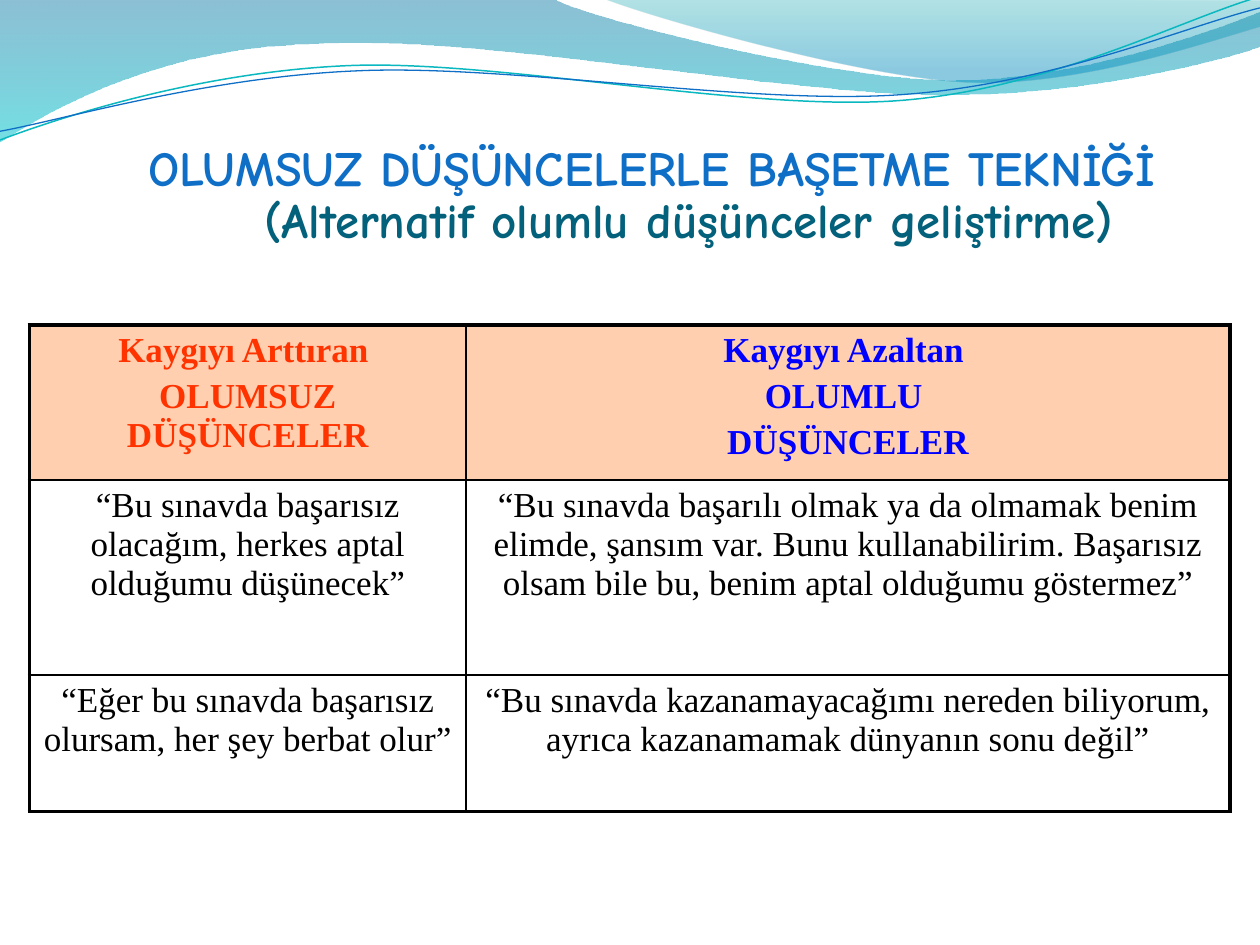
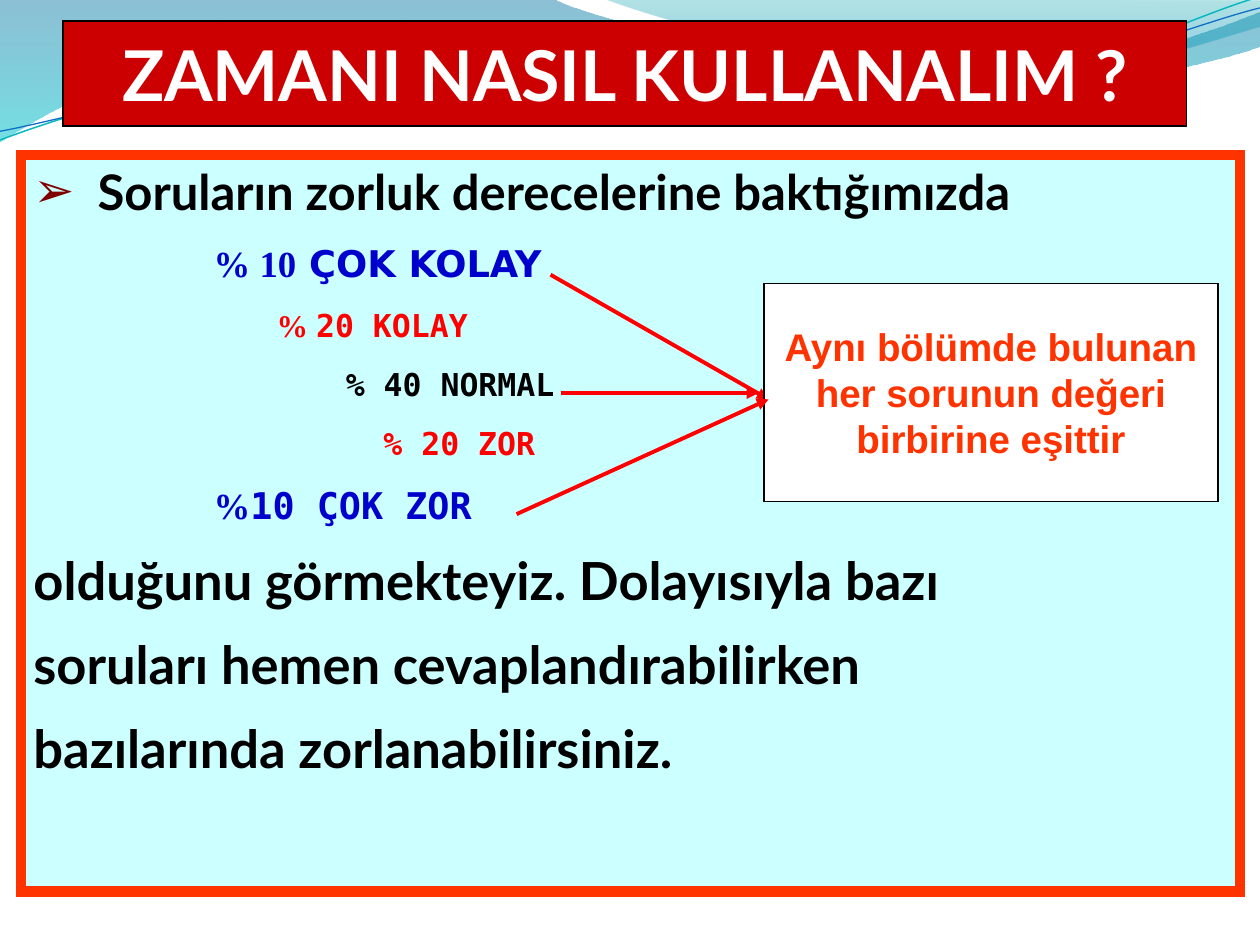
from dataclasses import dataclass

from lxml import etree
from pptx import Presentation
from pptx.dml.color import RGBColor
from pptx.enum import shapes, text
from pptx.oxml.ns import qn
from pptx.util import Pt


@dataclass(frozen=True)
class Theme:
    blue: str = "0F6FC6"
    teal: str = "04617B"
    aqua: str = "0AB8BF"
    orange: str = "FF3300"
    red: str = "FF0000"
    banner_red: str = "CC0000"
    maroon: str = "800000"
    positive: str = "0000FF"
    navy: str = "0000CC"
    peach: str = "FFCFAF"
    pale_cyan: str = "CCFFFF"
    black: str = "000000"
    white: str = "FFFFFF"
    comic: str = "Comic Neue"
    serif: str = "Times New Roman"
    lato: str = "Lato"
    arial: str = "Arial"
    sans: str = "DejaVu Sans"
    mono: str = "DejaVu Sans Mono"
    heading: int = 28
    cell: int = 20
    banner: int = 40
    lead: int = 28
    extreme: int = 21
    middle: int = 18
    closing: int = 30
    callout: int = 22


T = Theme()


def style_runs(paragraph, font, size, color, bold=True):
    for run in paragraph.runs:
        run.font.name, run.font.size, run.font.bold = font, Pt(size), bold
        run.font.color.rgb = RGBColor.from_string(color)


def paint(shape, fill, line, width):
    shape.shadow.inherit = False
    for part, color in ((shape.fill, fill), (shape.line.fill, line)):
        if color:
            part.solid()
            part.fore_color.rgb = RGBColor.from_string(color)
        else:
            part.background()
    if line:
        shape.line.width = Pt(width)
        etree.SubElement(shape.line._get_or_add_ln(), qn("a:miter"), lim="800000")


prs = Presentation()
prs.slide_width, prs.slide_height = Pt(720), Pt(540)
title_only = prs.slide_layouts[5]
coping = prs.slides.add_slide(title_only)
timing = prs.slides.add_slide(title_only)

# Shared waves: one point is a straight step, three points are a Bezier step
# Each wave: start, steps, gradient stops (colour, position, opacity), line, width
waves = [
    ((0, 0),
     [[(317, -0.5)],
      [(342.5, 12), (478, 45.5), (546, 45.5)],
      [(614, 45.5), (690, 18.5), (720, 6.5)],
      [(721, 26)],
      [(708, 31.5), (626.5, 54.5), (537, 54)],
      [(447.5, 54), (275, 20), (185, 24.5)],
      [(93, 26), (33, 60), (-1, 81.5)],
      [(0, 0)]],
     [("0074A1", 0, 45), ("00C6CF", 1, 55)], None, 0),
    ((345, -1),
     [[(366.5, 8), (491, 44.5), (553.5, 47)],
      [(616.5, 49.5), (692, 23), (720, 15)],
      [(720, 0)],
      [(345, -1)]],
     [("00A1A9", 0, 30), ("008BBF", 0.8, 45)], None, 0),
    ((0, 80),
     [[(34.5, 67), (114, 41), (199.5, 37.5)],
      [(284.5, 34), (427, 64), (513.5, 57.5)],
      [(600, 51), (675.5, 11), (718.5, -1.5)]],
     None, T.aqua, 0.85),
    ((0, 75),
     [[(34, 69), (118, 44), (204, 40.5)],
      [(290, 36.5), (430, 60.5), (516, 54)],
      [(602, 48), (677.5, 15), (720, 4.5)]],
     None, T.blue, 0.75),
]
UNITS = 100
for index, (start, steps, stops, line, width) in enumerate(waves):
    points = [(x * UNITS, y * UNITS) for step in steps for x, y in step]
    outline = coping.shapes.build_freeform(start[0] * UNITS, start[1] * UNITS,
                                           scale=Pt(1) / UNITS)
    outline.add_line_segments(points, close=bool(stops))
    wave = outline.convert_to_shape()
    # Join each group of three points into one curve
    segments = iter(list(wave.element.iter(qn("a:lnTo"))))
    for step in steps:
        group = [next(segments) for _ in step]
        if len(group) == 3:
            group[0].addprevious(curve := etree.Element(qn("a:cubicBezTo")))
            for segment in group:
                curve.append(segment[0])
                segment.getparent().remove(segment)
    paint(wave, None, line, width)
    if stops:
        wave.fill.gradient()
        wave.fill.gradient_angle = 270
        for stop, (color, position, _) in zip(wave.fill.gradient_stops, stops):
            stop.color.rgb = RGBColor.from_string(color)
            stop.position = position
        for tint, (_, _, opacity) in zip(wave.element.spPr.iter(qn("a:srgbClr")), stops):
            etree.SubElement(tint, qn("a:alpha"), val=str(opacity * 1000))
    # The master carries the waves for every slide
    wave.element.nvSpPr.cNvPr.set("id", str(100 + index))
    prs.slide_master.shapes.element.insert(2 + index, wave.element)

# Slide 1: heading
heading = coping.shapes.title
heading.left, heading.top, heading.width, heading.height = Pt(25), Pt(78.5), Pt(695), Pt(73.5)
frame = heading.text_frame
frame.word_wrap = True
frame.auto_size = text.MSO_AUTO_SIZE.NONE
frame.vertical_anchor = text.MSO_ANCHOR.TOP
frame.text = "OLUMSUZ DÜŞÜNCELERLE BAŞETME TEKNİĞİ "
technique = frame.paragraphs[0]
technique.add_run().text = "(Alternatif olumlu düşünceler geliştirme)"
technique.alignment = text.PP_ALIGN.CENTER
technique.line_spacing = 0.9
technique.space_before = Pt(5.6)
style_runs(technique, T.comic, T.heading, T.blue)
technique.runs[1].font.color.rgb = RGBColor.from_string(T.teal)
indent = technique._p.get_or_add_pPr()
indent.set("marL", str(Pt(42)))
indent.set("indent", str(Pt(-42)))

# Slide 1: table of negative and positive thoughts
thoughts = [
    ("Kaygıyı Arttıran \nOLUMSUZ DÜŞÜNCELER",
     "Kaygıyı Azaltan \nOLUMLU \nDÜŞÜNCELER"),
    ("“Bu sınavda başarısız olacağım, herkes aptal olduğumu düşünecek”",
     "“Bu sınavda başarılı olmak ya da olmamak benim elimde, şansım var. Bunu "
     "kullanabilirim. Başarısız olsam bile bu, benim aptal olduğumu göstermez”"),
    ("“Eğer bu sınavda başarısız olursam, her şey berbat olur”",
     "“Bu sınavda kazanamayacağımı nereden biliyorum, ayrıca kazanamamak "
     "dünyanın sonu değil”"),
]
table = coping.shapes.add_table(3, 2, Pt(16.8), Pt(185.6), Pt(686), Pt(278)).table
table.first_row = table.horz_banding = False
for column, width in zip(table.columns, (249.6, 436.4)):
    column.width = Pt(width)
for row, height in zip(table.rows, (88.6, 111.5, 77.9)):
    row.height = Pt(height)
for r, pair in enumerate(thoughts):
    for c, thought in enumerate(pair):
        cell = table.cell(r, c)
        cell.text_frame.text = thought
        for paragraph in cell.text_frame.paragraphs:
            paragraph.alignment = text.PP_ALIGN.CENTER
            paragraph.space_before = Pt(4)
            color = T.black if r else (T.orange, T.positive)[c]
            style_runs(paragraph, T.serif, T.cell, color, bold=r == 0)
        # Thick outer frame, thin inner rules
        outer = {"a:lnL": c == 0, "a:lnR": c == 1, "a:lnT": r == 0, "a:lnB": r == 2}
        for side, is_outer in outer.items():
            border = etree.SubElement(cell._tc.get_or_add_tcPr(), qn(side),
                                      w=str(Pt(2.25 if is_outer else 1)))
            solid = etree.SubElement(border, qn("a:solidFill"))
            etree.SubElement(solid, qn("a:srgbClr"), val=T.black)
        if r == 0:
            cell.fill.solid()
            cell.fill.fore_color.rgb = RGBColor.from_string(T.peach)
        else:
            cell.fill.background()

# Slide 2: banner
banner = timing.shapes.title
banner.left, banner.top, banner.width, banner.height = Pt(36), Pt(12), Pt(642.2), Pt(60)
paint(banner, T.banner_red, T.black, 0.75)
banner.text_frame.text = "ZAMANI NASIL KULLANALIM ?"
banner.text_frame.word_wrap = False
banner.text_frame.auto_size = text.MSO_AUTO_SIZE.NONE
banner.text_frame.vertical_anchor = text.MSO_ANCHOR.MIDDLE
banner.text_frame.paragraphs[0].alignment = text.PP_ALIGN.CENTER
style_runs(banner.text_frame.paragraphs[0], T.lato, T.banner, T.white)

# Slide 2: panel; each line is indent, size, colour and its (wording, font) runs
difficulty = [
    (36.7, T.lead, T.black, [("Soruların zorluk derecelerine baktığımızda", T.lato)]),
    (103, T.extreme, T.navy, [("% 10", T.serif), (" ÇOK KOLAY", T.sans)]),
    (139, T.middle, T.red, [("% ", T.serif), ("20 KOLAY", T.mono)]),
    (178.5, T.middle, T.black, [("% 40 NORMAL", T.mono)]),
    (200, T.middle, T.red, [("% 20 ZOR", T.mono)]),
    (103, T.extreme, T.navy, [("%", T.serif), ("10 ÇOK ZOR", T.mono)]),
    (0, T.closing, T.black, [("olduğunu görmekteyiz. Dolayısıyla bazı", T.lato)]),
    (0, T.closing, T.black, [("soruları hemen cevaplandırabilirken", T.lato)]),
    (0, T.closing, T.black, [("bazılarında zorlanabilirsiniz.", T.lato)]),
]
panel = timing.shapes.add_shape(shapes.MSO_SHAPE.RECTANGLE, Pt(12), Pt(88.5), Pt(696.5), Pt(421))
paint(panel, T.pale_cyan, T.orange, 6)
panel.text_frame.word_wrap = True
panel.text_frame.vertical_anchor = text.MSO_ANCHOR.TOP
panel.text_frame.text = "\n".join(runs[0][0] for *_, runs in difficulty)
for paragraph, (margin, size, color, runs) in zip(panel.text_frame.paragraphs, difficulty):
    for wording, _ in runs[1:]:
        paragraph.add_run().text = wording
    style_runs(paragraph, T.lato, size, color)
    for run, (_, font) in zip(paragraph.runs, runs):
        run.font.name = font
    paragraph.alignment = text.PP_ALIGN.LEFT
    paragraph.space_before = paragraph.space_after = Pt(6)
    paragraph._p.get_or_add_pPr().set("marL", str(Pt(margin)))

# Arrow bullet on the opening line
opening = panel.text_frame.paragraphs[0]._p.get_or_add_pPr()
opening.set("indent", str(Pt(-36.7)))
bullet_color = etree.SubElement(opening, qn("a:buClr"))
etree.SubElement(bullet_color, qn("a:srgbClr"), val=T.maroon)
etree.SubElement(opening, qn("a:buFont"), typeface=T.sans)
etree.SubElement(opening, qn("a:buChar"), char="➢")

# Slide 2: callout
callout = timing.shapes.add_shape(shapes.MSO_SHAPE.RECTANGLE,
                                  Pt(436.5), Pt(162), Pt(259.5), Pt(124.5))
paint(callout, T.white, T.black, 0.75)
callout.text_frame.word_wrap = False
callout.text_frame.vertical_anchor = text.MSO_ANCHOR.MIDDLE
callout.text_frame.text = "Aynı bölümde bulunan\nher sorunun değeri\nbirbirine eşittir"
for paragraph in callout.text_frame.paragraphs:
    paragraph.alignment = text.PP_ALIGN.CENTER
    style_runs(paragraph, T.arial, T.callout, T.orange)

# Slide 2: arrows from the difficulty lines towards the callout
arrows = [((314.6, 157), (439.2, 228.2)),
          ((320.4, 224.6), (433.4, 224.6)),
          ((295.2, 293.8), (439.2, 228.2))]
for (x1, y1), (x2, y2) in arrows:
    arrow = timing.shapes.add_connector(shapes.MSO_CONNECTOR.STRAIGHT,
                                        Pt(x1), Pt(y1), Pt(x2), Pt(y2))
    arrow.line.color.rgb = RGBColor.from_string(T.red)
    arrow.line.width = Pt(2.25)
    etree.SubElement(arrow.line._get_or_add_ln(), qn("a:tailEnd"), type="triangle")
    etree.SubElement(arrow.element.spPr, qn("a:effectLst"))
    # The first arrow tucks its tip under the callout
    if y1 == arrows[0][0][1]:
        callout.element.addprevious(arrow.element)

prs.save("out.pptx")
